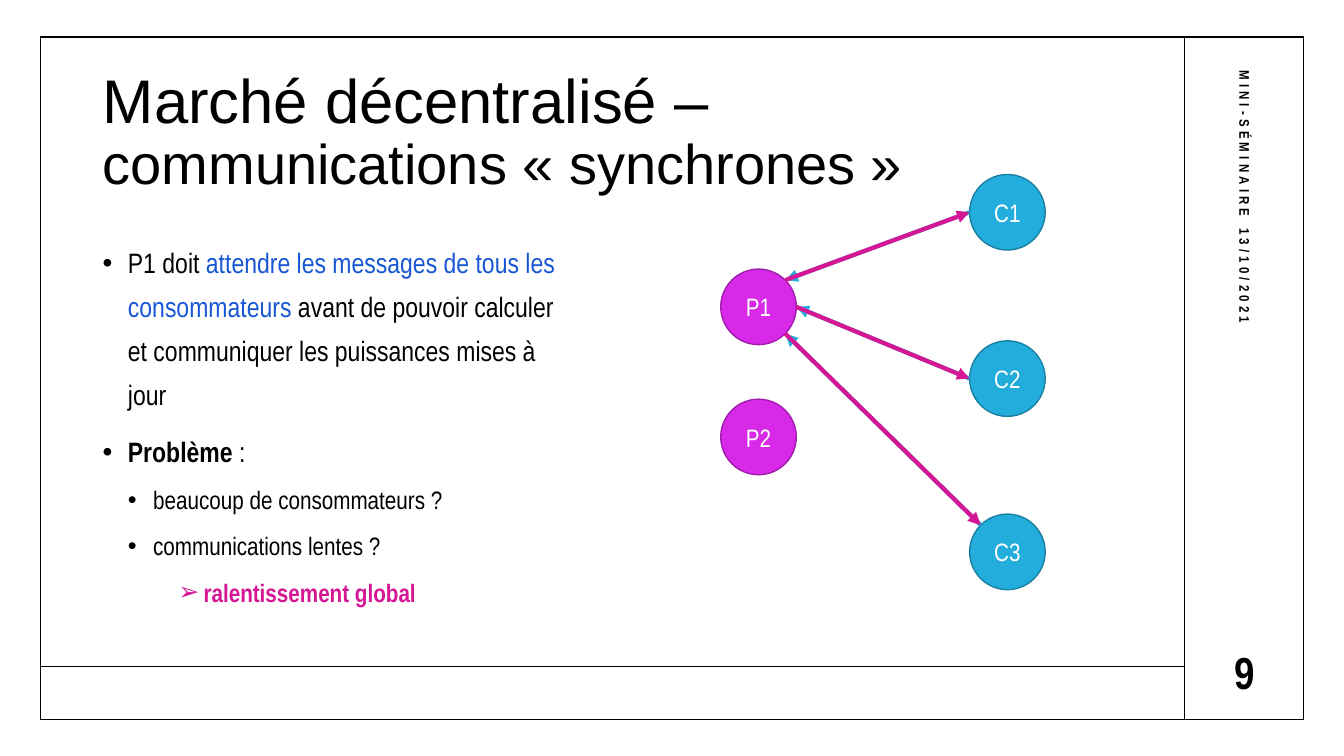
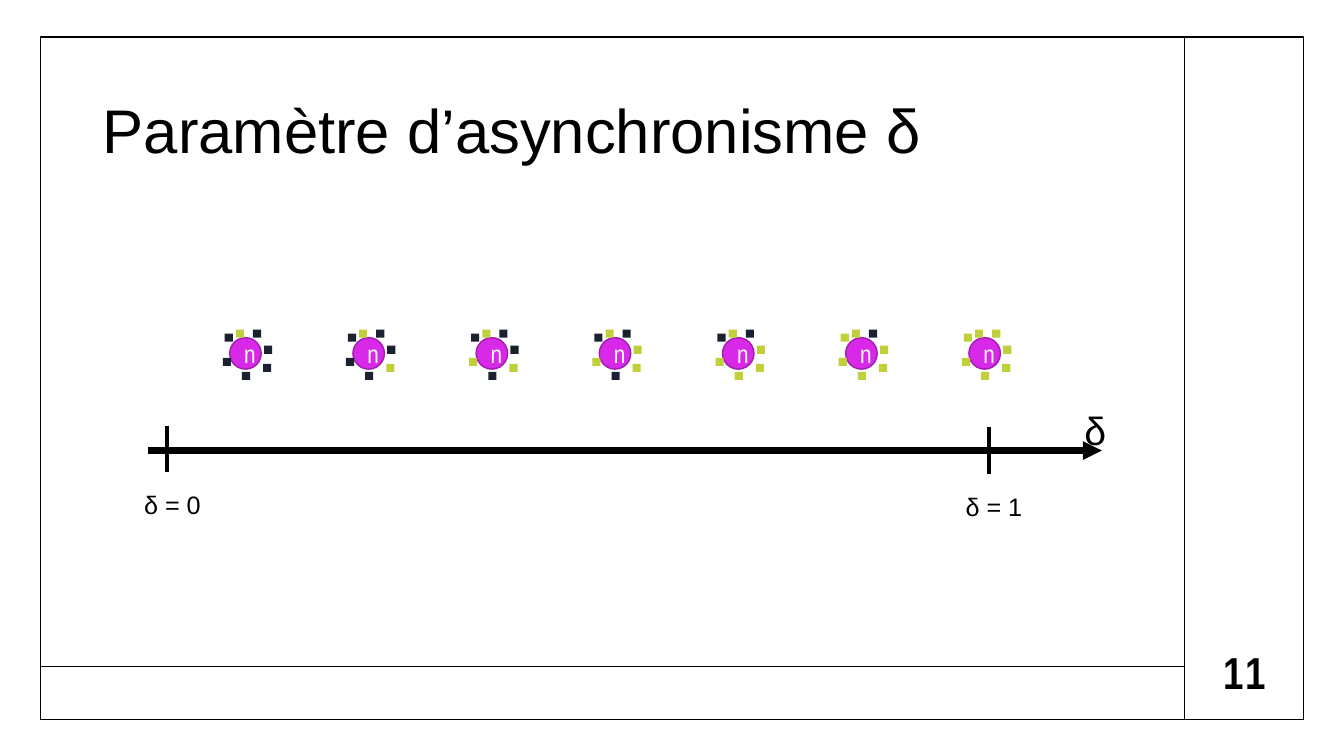
import pptx
import pptx.util
import pptx.dml.color
import pptx.enum.shapes
import pptx.enum.text
import pptx.oxml.ns
from lxml import etree

Pt = pptx.util.Pt
SHAPE = pptx.enum.shapes.MSO_SHAPE
ALIGN = pptx.enum.text.PP_ALIGN
ANCHOR = pptx.enum.text.MSO_ANCHOR
FIT = pptx.enum.text.MSO_AUTO_SIZE
qn = pptx.oxml.ns.qn

COLORS = {
    "black": "000000", "white": "FFFFFF", "blue": "1756D5", "pink": "D51796",
    "producer": "D729E7", "producer_edge": "9F1EAB",
    "consumer": "23ADDC", "consumer_edge": "1A80A3",
    "dark": "1B2130", "lime": "C0CF3A",
}
HEAD, TEXT = "Arial", "Arial Narrow"

# Boxes are left, top, width, height in points
FRAME = (28.8, 26.6, 902.2, 487.4)
TITLE = (66.2, 43.2, 747.4, 104.4)
BODY = (66.2, 164.9, 344.2, 289.4)
SIDE_TEXT = (727.2, 190.8, 324, 28.8)
NUMBER = (851.8, 463, 74.9, 33.1)
NETWORK = (514.8, 124.6, 231.8, 296.6)
AXIS = (105.8, 235.4, 681.2, 140.4)


def rgb(name):
    return pptx.dml.color.RGBColor.from_string(COLORS[name])


# Text helpers
def style(r, size, font=TEXT, color="black", bold=False, spacing=0):
    r.font.size = Pt(size)
    r.font.name = font
    r.font.bold = bold
    r.font.color.rgb = rgb(color)
    if spacing:
        r.font._element.set("spc", str(spacing * 100))


def add_run(p, text, size, **look):
    r = p.add_run()
    r.text = text
    style(r, size, **look)


def place(sp, box):
    sp.left, sp.top, sp.width, sp.height = map(Pt, box)


def add_text(shapes, box, text, size, align=ALIGN.LEFT, fitted=False, **look):
    sp = shapes.add_textbox(*map(Pt, box))
    tf = sp.text_frame
    tf.text = text
    tf.word_wrap = not fitted
    if fitted:
        tf.auto_size = FIT.SHAPE_TO_FIT_TEXT
    else:
        tf.vertical_anchor = ANCHOR.MIDDLE
    tf.paragraphs[0].alignment = align
    style(tf.paragraphs[0].runs[0], size, **look)
    return sp


def add_bullet(p, char, indent):
    pPr = p._p.get_or_add_pPr()
    pPr.set("marL", str(Pt(indent)))
    pPr.set("indent", str(-Pt(18)))
    etree.SubElement(pPr, qn("a:buFont")).set("typeface", "Arial")
    etree.SubElement(pPr, qn("a:buChar")).set("char", char)


# Drawing helpers
def add_shape(shapes, kind, box, fill=None, edge=None):
    sp = shapes.add_shape(kind, *map(Pt, box))
    sp.shadow.inherit = False
    if fill:
        sp.fill.solid()
        sp.fill.fore_color.rgb = rgb(fill)
    else:
        sp.fill.background()
    if edge:
        sp.line.color.rgb = rgb(edge)
        sp.line.width = Pt(1)
    else:
        sp.line.fill.background()
    return sp


def add_node(shapes, box, label, kind):
    sp = add_shape(shapes, SHAPE.OVAL, box, kind, kind + "_edge")
    sp.text_frame.text = label
    p = sp.text_frame.paragraphs[0]
    p.alignment = ALIGN.CENTER
    style(p.runs[0], 18, color="white")


def add_line(shapes, start, end, width, color="black", arrow=False):
    cx = shapes.add_connector(pptx.enum.shapes.MSO_CONNECTOR.STRAIGHT,
                              *map(Pt, (*start, *end)))
    cx.line.color.rgb = rgb(color)
    cx.line.width = Pt(width)
    if arrow:
        ln = cx.line._get_or_add_ln()
        etree.SubElement(ln, qn("a:tailEnd")).set("type", "triangle")
    etree.SubElement(cx._element.spPr, qn("a:effectLst"))


# Shared frame, title and page number
def add_page(prs, layout, title, number):
    s = prs.slides.add_slide(prs.slide_layouts[layout])
    x, y, w, h = FRAME
    split_x, split_y = 846, 476
    add_shape(s.shapes, SHAPE.RECTANGLE, FRAME, edge="black")
    add_line(s.shapes, (split_x, y), (split_x, y + h), 1)
    add_line(s.shapes, (x, split_y), (split_x, split_y), 1)

    place(s.shapes.title, TITLE)
    tf = s.shapes.title.text_frame
    tf.auto_size = FIT.NONE
    tf.vertical_anchor = ANCHOR.MIDDLE
    p = tf.paragraphs[0]
    p.alignment = ALIGN.LEFT
    p.line_spacing = 0.9
    for i, (text, size) in enumerate(title):
        if i:
            p.add_line_break()
        add_run(p, text, size, font=HEAD)

    add_text(s.shapes, NUMBER, number, 32, ALIGN.CENTER, bold=True, spacing=3)
    return s


def fill_body(sp, box, items):
    place(sp, box)
    tf = sp.text_frame
    tf.auto_size = FIT.NONE
    tf.vertical_anchor = ANCHOR.TOP
    for i, (level, char, indent, runs) in enumerate(items):
        p = tf.add_paragraph() if i else tf.paragraphs[0]
        p.level = level
        add_bullet(p, char, indent)
        p.alignment = ALIGN.LEFT
        p.line_spacing = 1.3
        p.space_before = Pt(0 if i == 0 else 5 if level else 10)
        for text, color, bold in runs:
            add_run(p, text, 18 if level else 20, color=color, bold=bold)


# Producers and consumers exchanging messages
def draw_network(shapes, box):
    x, y, w, _ = box
    d = 54
    radius, diagonal = d / 2, d / 2 * 0.5 ** 0.5
    producer_ys = [y + 67.6, y + 160.5]
    consumer_x = x + w - d
    consumer_ys = [y, y + 118.8, y + 242.6]
    for i, top in enumerate(producer_ys, 1):
        add_node(shapes, (x, top, d, d), f"P{i}", "producer")
    for i, top in enumerate(consumer_ys, 1):
        add_node(shapes, (consumer_x, top, d, d), f"C{i}", "consumer")

    px, py = x + radius, producer_ys[0] + radius
    cx = consumer_x + radius
    c1, c2, c3 = (top + radius for top in consumer_ys)
    links = [
        ((px + diagonal, py - diagonal), (consumer_x, c1)),
        ((px + radius, py), (consumer_x, c2)),
        ((px + diagonal, py + diagonal), (cx - diagonal, c3 - diagonal)),
    ]
    for producer, consumer in links:
        add_line(shapes, consumer, producer, 3, "consumer", arrow=True)
    for producer, consumer in links:
        add_line(shapes, producer, consumer, 3, "pink", arrow=True)


# Node surrounded by dots, the first ones lit
def draw_cluster(shapes, x, y, lit):
    dots = [(9.4, 0), (28.8, 24.5), (0, 20.2), (29.5, 11.5),
            (13.7, 30.2), (1.4, 2.9), (21.6, 0)]
    group = shapes.add_group_shape().shapes
    add_node(group, (x + 5, y + 5.8, 22.5, 22.5), "n", "producer")
    for i, (dx, dy) in enumerate(dots):
        add_shape(group, SHAPE.RECTANGLE, (x + dx, y + dy, 5.8, 5.8),
                  "lime" if i < lit else "dark")


# Axis from δ = 0 to δ = 1 with seven clusters above
def draw_axis(shapes, box):
    x, y, w, _ = box
    for i in range(7):
        draw_cluster(shapes, x + 53.3 + 88 * i, y, i + 1)
    group = shapes.add_group_shape().shapes
    axis_y = y + 86.4
    add_line(group, (x, axis_y), (x + w, axis_y), 4.5, arrow=True)
    for value, dx, dy in [(0, 13.7, 68.6), (1, 600.5, 69.8)]:
        tick_x, tick_y = x + dx, y + dy
        add_line(group, (tick_x, tick_y), (tick_x, tick_y + 33.4), 3)
        add_text(group, (tick_x - 23.7, tick_y + 42.2, 55.4, 28.8),
                 f"δ = {value}", 18, fitted=True, font=HEAD)
    add_text(group, (x + w - 19.5, y + 51.2, 25.9, 35.3), "δ", 28,
             fitted=True, font=HEAD)


def synchronous_slide(prs):
    s = add_page(prs, 1, [("Marché décentralisé – ", 44),
                          ("communications «\u00a0synchrones\u00a0»".replace("\u00a0", " "), 40)], "9")
    fill_body(s.placeholders[1], BODY, [
        (0, "•", 18, [
            ("P1 doit ", "black", False),
            ("attendre les messages de tous les consommateurs", "blue", False),
            (" avant de pouvoir calculer et communiquer les puissances "
             "mises à jour", "black", False)]),
        (0, "•", 18, [("Problème", "black", True), (" :", "black", False)]),
        (1, "•", 36, [("beaucoup de consommateurs ?", "black", False)]),
        (1, "•", 36, [("communications lentes ?", "black", False)]),
        (2, "➢", 72, [("ralentissement global", "pink", True)]),
    ])
    sp = add_text(s.shapes, SIDE_TEXT, "MINI-SÉMINAIRE 13/10/2021", 10,
                  bold=True, spacing=3)
    sp.rotation = 90
    draw_network(s.shapes, NETWORK)


def parameter_slide(prs):
    s = add_page(prs, 5, [("Paramètre d’asynchronisme δ", 44)], "11")
    draw_axis(s.shapes, AXIS)


def main():
    prs = pptx.Presentation()
    prs.slide_width, prs.slide_height = Pt(960), Pt(540)
    synchronous_slide(prs)
    parameter_slide(prs)
    prs.save("out.pptx")


if __name__ == "__main__":
    main()
